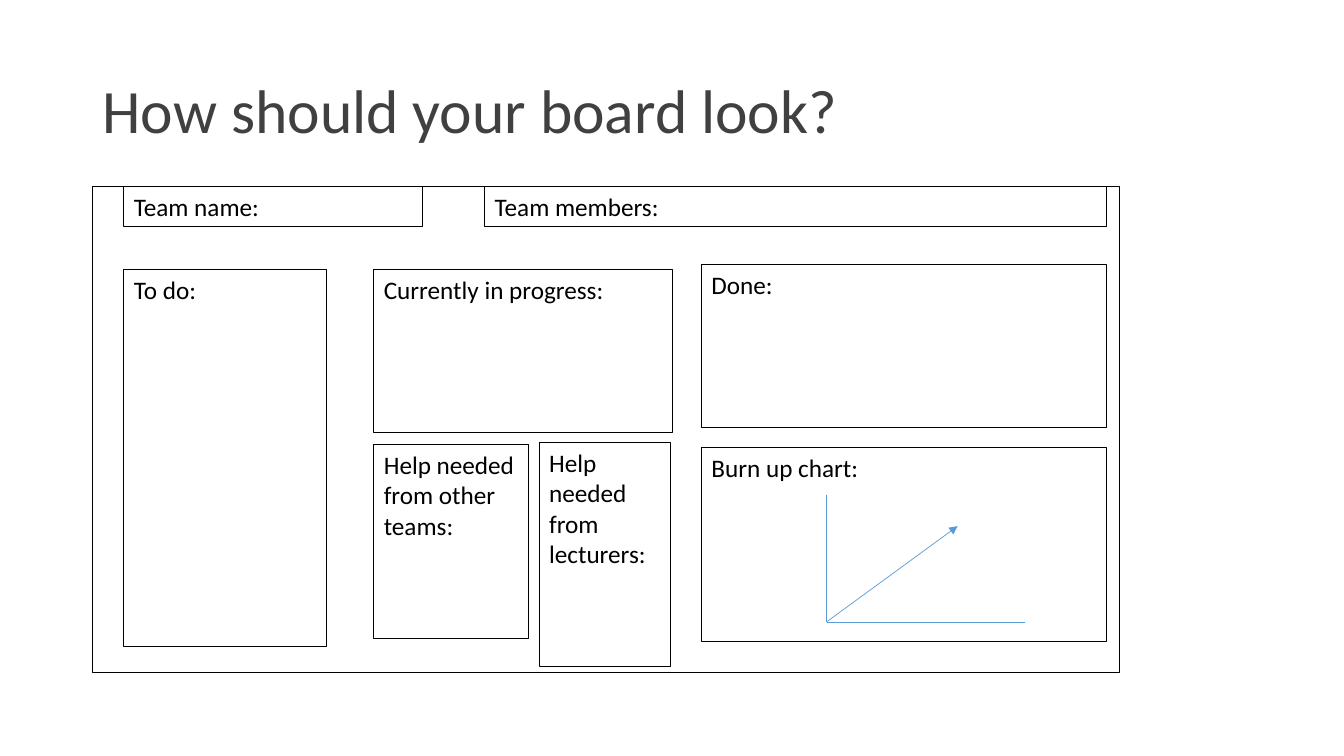
from dataclasses import dataclass

from lxml.etree import SubElement
from pptx import Presentation
from pptx.dml.color import RGBColor
from pptx.enum.shapes import MSO_CONNECTOR, MSO_SHAPE
from pptx.enum.text import MSO_ANCHOR, PP_ALIGN
from pptx.oxml.ns import qn
from pptx.util import Pt


@dataclass(frozen=True)
class Theme:
    """Colours, font, type sizes and line widths of the slide."""
    font: str = "Calibri"
    title_color: RGBColor = RGBColor(0x40, 0x40, 0x41)
    ink: RGBColor = RGBColor(0, 0, 0)
    axis: RGBColor = RGBColor(0x5B, 0x9B, 0xD5)
    title_size: float = 44
    label_size: float = 18
    border: float = 0.75
    axis_width: float = 0.5


THEME = Theme()
TOP = 133.2
LEFT, MIDDLE, RIGHT = 88.56, 267.12, 501.12
BOARD = (66.24, TOP, 733.68, 347.04)
ORIGIN = (590.4, 444.24)

PANELS = [
    ("Team name:", (LEFT, TOP, 213.12, 28.8)),
    ("Team members:", (346.32, TOP, 444.24, 28.8)),
    ("To do:", (LEFT, 192.24, 144.72, 269.28)),
    ("Currently in progress:", (MIDDLE, 192.24, 213.12, 116.64)),
    ("Help needed from other teams:", (MIDDLE, 317.52, 110.16, 138.24)),
    ("Help needed from lecturers:", (385.2, 316.08, 93.6, 159.84)),
    ("Done:", (RIGHT, 189, 289.44, 116.64)),
    ("Burn up chart:", (RIGHT, 319.68, 289.44, 138.24)),
]


def set_all(target, values):
    """Set each named attribute of the target."""
    for name, value in values.items():
        setattr(target, name, value)


def write(box, text, size, color, anchor, spacing):
    """Put one left-aligned paragraph in the box."""
    frame = box.text_frame
    set_all(frame, {"word_wrap": True, "vertical_anchor": anchor})
    para = frame.paragraphs[0]
    set_all(para, {"alignment": PP_ALIGN.LEFT, "line_spacing": spacing})
    span = para.add_run()
    span.text = text
    set_all(span.font, {"name": THEME.font, "size": Pt(size)})
    span.font.color.rgb = color


def add_title(page, text):
    """Add the slide heading."""
    box = page.shapes.add_textbox(Pt(66.24), Pt(28.8), Pt(828), Pt(104.4))
    write(box, text, THEME.title_size, THEME.title_color, MSO_ANCHOR.MIDDLE, 0.9)


def add_outline(page, place):
    """Add an unfilled rectangle with a thin border."""
    box = page.shapes.add_shape(MSO_SHAPE.RECTANGLE, *map(Pt, place))
    box.shadow.inherit = False
    box.fill.background()
    box.line.color.rgb = THEME.ink
    box.line.width = Pt(THEME.border)
    return box


def add_panel(page, text, place):
    """Add a labelled area of the board."""
    box = add_outline(page, place)
    write(box, text, THEME.label_size, THEME.ink, MSO_ANCHOR.TOP, 1.0)


def add_line(page, start, end, arrow=False):
    """Add a chart line, with an arrowhead at its end if asked."""
    line = page.shapes.add_connector(
        MSO_CONNECTOR.STRAIGHT, *map(Pt, (*start, *end)))
    line.line.color.rgb = THEME.axis
    line.line.width = Pt(THEME.axis_width)
    properties = line._element.spPr
    SubElement(properties, qn("a:effectLst"))
    if arrow:
        SubElement(properties.find(qn("a:ln")), qn("a:tailEnd"), type="triangle")


def main():
    """Build the team board slide."""
    deck = Presentation()
    set_all(deck, {"slide_width": Pt(960), "slide_height": Pt(540)})
    page = deck.slides.add_slide(deck.slide_layouts[6])
    add_title(page, "How should your board look?")
    add_outline(page, BOARD)
    for text, place in PANELS:
        add_panel(page, text, place)
    add_line(page, (ORIGIN[0], 353.52), ORIGIN)
    add_line(page, (732.24, ORIGIN[1]), ORIGIN)
    add_line(page, ORIGIN, (684, 375.84), arrow=True)
    deck.save("out.pptx")


if __name__ == "__main__":
    main()
